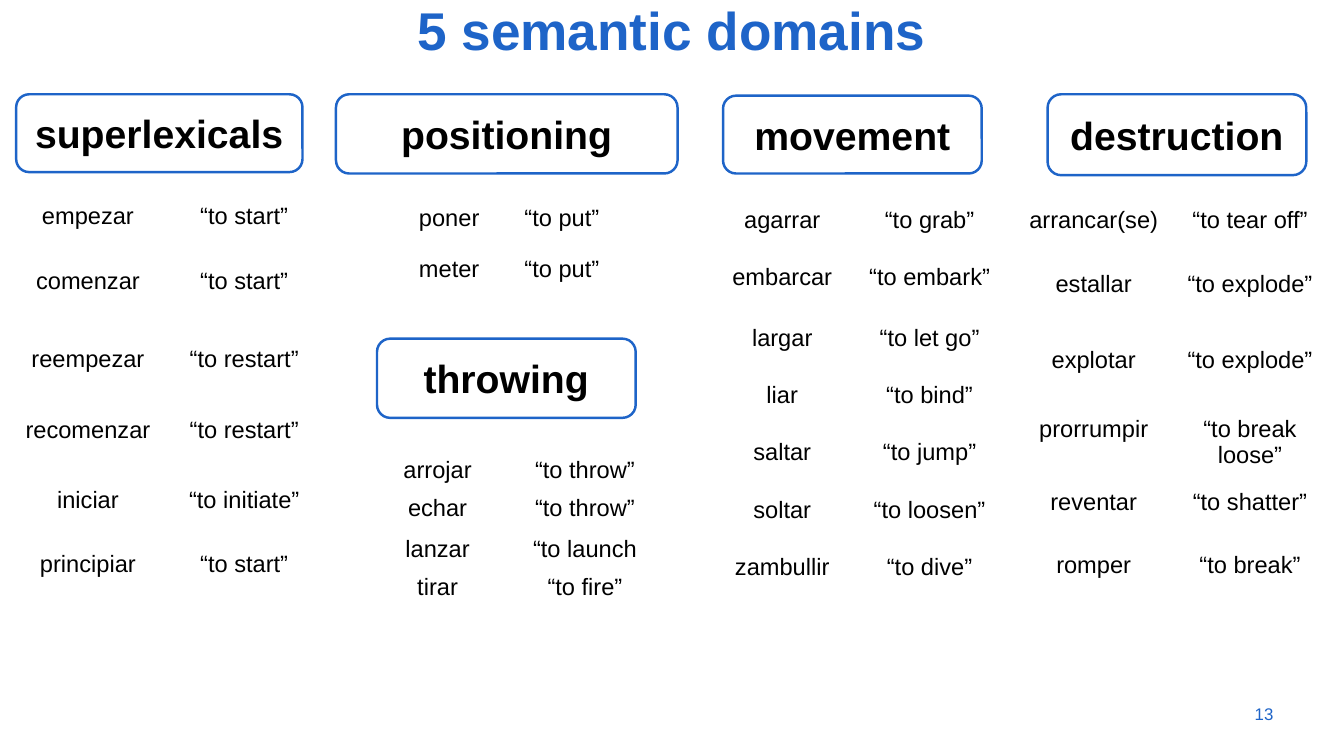
from pptx import Presentation
from pptx.dml.color import RGBColor
from pptx.enum.shapes import MSO_SHAPE
from pptx.enum.text import MSO_ANCHOR, PP_ALIGN
from pptx.util import Cm, Pt

COLORS = {"blue": "1E64C8", "black": "000000"}


def write(frame, text, size, color="black", bold=False,
          align=PP_ALIGN.CENTER, space=None):
    frame.word_wrap = True
    para = frame.paragraphs[0]
    para.alignment = align
    para.line_spacing = space
    run = para.add_run()
    run.text = text
    run.font.name = "Arial"
    run.font.size = Pt(size)
    run.font.bold = bold
    run.font.color.rgb = RGBColor.from_string(COLORS[color])


deck = Presentation()
deck.slide_width, deck.slide_height = Cm(48.16), Cm(27.1)
slide = deck.slides.add_slide(deck.slide_layouts[6])
shapes = slide.shapes

# Title and slide number
title = shapes.add_textbox(Cm(2.24), Cm(0.03), Cm(43.64), Cm(2.39))
write(title.text_frame, "5 semantic domains", 54, color="blue", bold=True, space=0.9)
number = shapes.add_textbox(Cm(43.31), Cm(24.87), Cm(2.57), Cm(1.45))
number.text_frame.vertical_anchor = MSO_ANCHOR.MIDDLE
write(number.text_frame, "13", 17.1, color="blue", align=PP_ALIGN.RIGHT)

# Domains: name, box, table corner, column widths, verbs with row heights
domains = [
    ("superlexicals", (0.58, 3.38, 10.26, 2.79), (0.56, 7.14), (5.18, 6.02), [
        ("empezar", "“to start”", 2.36),
        ("comenzar", "“to start”", 2.79),
        ("reempezar", "“to restart”", 2.54),
        ("recomenzar", "“to restart”", 2.49),
        ("iniciar", "“to initiate”", 2.31),
        ("principiar", "“to start”", 2.13),
    ]),
    ("positioning", (12.04, 3.38, 12.24, 2.84), (14.15, 7.21), (3.89, 4.19), [
        ("poner", "“to put”", 1.83),
        ("meter", "“to put”", 1.83),
    ]),
    ("throwing", (13.51, 12.14, 9.27, 2.84), (12.9, 16.26), (5.56, 5), [
        ("arrojar", "“to throw”", 1.37),
        ("echar", "“to throw”", 1.45),
        ("lanzar", "“to launch", 1.37),
        ("tirar", "“to fire”", 1.37),
    ]),
    ("movement", (25.91, 3.43, 9.27, 2.79), (25.25, 7.29), (5.56, 5), [
        ("agarrar", "“to grab”", 2.06),
        ("embarcar", "“to embark”", 2.16),
        ("largar", "“to let go”", 2.06),
        ("liar", "“to bind”", 2.06),
        ("saltar", "“to jump”", 2.06),
        ("soltar", "“to loosen”", 2.06),
        ("zambullir", "“to dive”", 2.06),
    ]),
    ("destruction", (37.54, 3.38, 9.27, 2.9), (36.6, 7.29), (5.18, 6.02), [
        ("arrancar(se)", "“to tear off”", 2.31),
        ("estallar", "“to explode”", 2.72),
        ("explotar", "“to explode”", 2.46),
        ("prorrumpir", "“to break loose”", 2.62),
        ("reventar", "“to shatter”", 2.26),
        ("romper", "“to break”", 2.06),
    ]),
]

for name, box, corner, widths, verbs in domains:
    # Heading box
    head = shapes.add_shape(MSO_SHAPE.ROUNDED_RECTANGLE, *map(Cm, box))
    head.shadow.inherit = False
    head.fill.background()
    head.line.color.rgb = RGBColor.from_string(COLORS["blue"])
    head.line.width = Pt(2.5)
    head.text_frame.vertical_anchor = MSO_ANCHOR.MIDDLE
    write(head.text_frame, name, 39.8, bold=True)

    # Verb table
    left, top = corner
    high = sum(verb[2] for verb in verbs)
    table = shapes.add_table(len(verbs), 2, Cm(left), Cm(top),
                             Cm(sum(widths)), Cm(high)).table
    table.first_row = table.horz_banding = False
    for col, width in zip(table.columns, widths):
        col.width = Cm(width)
    for row, (verb, gloss, height) in zip(table.rows, verbs):
        row.height = Cm(height)
        for cell, text in zip(row.cells, (verb, gloss)):
            cell.fill.background()
            write(cell.text_frame, text, 24)

deck.save("out.pptx")
